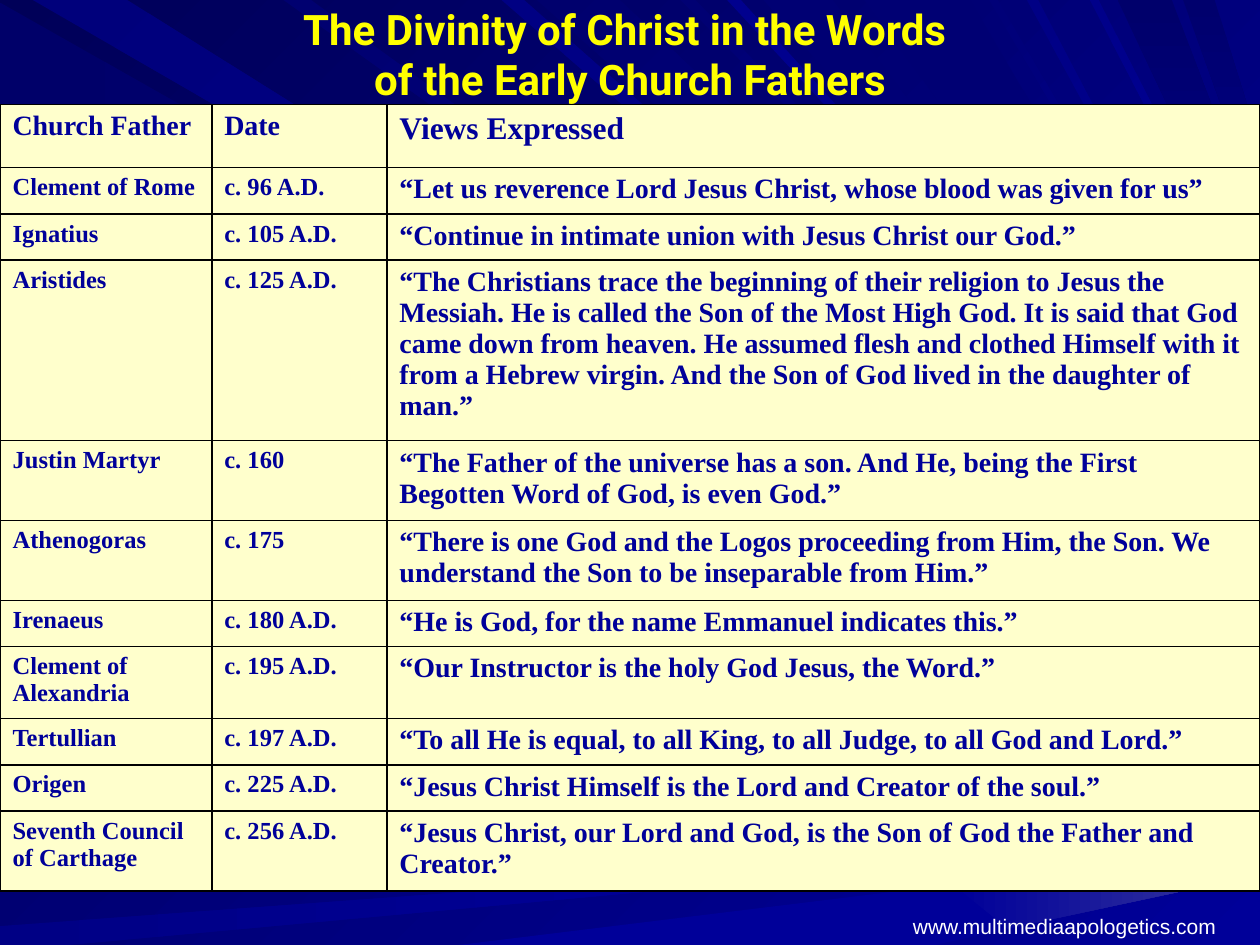
from dataclasses import dataclass
from typing import NamedTuple

from lxml import etree
from pptx import Presentation
from pptx import util as u
from pptx.dml.color import RGBColor
from pptx.enum import text
from pptx.oxml import ns


@dataclass(frozen=True)
class Theme:
    background: tuple = ("000058", "000099")
    title_color: str = "FFFF00"
    ink: str = "000099"
    cell: str = "FFFFCC"
    border: str = "000000"
    footer_color: str = "FFFFFF"
    title_font: str = "Roboto"
    table_font: str = "Times New Roman"
    footer_font: str = "Arial"
    title_size: int = 24
    header_sizes: tuple = (16, 16, 18)
    body_sizes: tuple = (14, 14, 16)
    footer_size: int = 12


class Beam(NamedTuple):
    """A ray of light; points are in tenths of the slide width."""
    start: str
    end: str
    angle: int
    points: tuple


class Witness(NamedTuple):
    father: str
    date: str
    view: str
    height: float


THEME = Theme()
UNIT = u.Cm(2.54)
ONE_LINE, TWO_NAME_LINES, TWO_VIEW_LINES = 0.93, 1.45, 1.61
COLUMN_WIDTHS = (4.27, 3.53, 17.6)

BEAMS = (
    Beam("000069", "000080", 0, ((5.56, 3.17), (0, 0.02), (0, 0.93), (5.29, 3.45), (10, 5.7), (10, 5.69))),
    Beam("00007B", "000099", 45, ((5.77, 2.98), (1.01, 0), (0.26, 0), (5.63, 3.1), (10, 5.63), (10, 5.62))),
    Beam("000085", "000099", 0, ((0, 7.5), (0.54, 7.5), (6.28, 6.97), (6.28, 6.89), (0, 7.35))),
    Beam("000099", "000099", 0, ((7.42, 7.5), (8.01, 7.37), (7.56, 7.02), (3.64, 7.5))),
    Beam("000099", "39399E", 0, ((10, 6.94), (10, 6.72), (7.56, 7.02), (8, 7.37))),
    Beam("000083", "000099", 45, ((3.98, 0), (9.44, 4.73), (9.47, 4.69), (4.16, 0))),
    Beam("00006D", "000099", 45, ((4.26, 0), (9.51, 4.65), (9.68, 4.49), (4.92, 0))),
    Beam("000073", "000099", 45, ((5.4, 0), (9.77, 4.4), (5.52, 0))),
    Beam("000073", "000080", 90, ((6.06, 0), (9.85, 4.31), (9.87, 4.3), (6.61, 0))),
    Beam("00006B", "000080", 90, ((8.87, 0), (9.73, 1.81), (9.86, 1.48), (9.3, 0))),
    Beam("00006D", "000080", 90, ((9.64, 0), (9.39, 0), (9.89, 1.38), (9.99, 1.13))),
    Beam("000070", "000099", 45, ((2.25, 0), (9.99, 5.52), (9.99, 5.47), (2.47, 0))),
    Beam("00008E", "000099", 45, ((5.77, 0), (9.99, 4.54), (9.99, 4.53), (5.88, 0))),
    Beam("000073", "000080", 90, ((7.7, 0), (6.86, 0), (9.99, 4.28), (9.99, 3.9))),
    Beam("000078", "000099", 45, ((7.85, 0), (9.99, 3.6), (9.99, 3.54), (7.92, 0))),
    Beam("000085", "000099", 45, ((8.15, 0), (9.99, 3.36), (9.99, 3.35), (8.24, 0))),
    Beam("00008A", "000099", 45, ((9.99, 2.49), (8.72, 0), (8.65, 0), (9.99, 2.58))),
)

HEADER = Witness("Church Father", "Date", "Views Expressed", 1.27)
WITNESSES = (
    Witness("Clement of Rome", "c. 96 A.D.",
            "“Let us reverence Lord Jesus Christ, whose blood was given for us”", ONE_LINE),
    Witness("Ignatius", "c. 105 A.D.",
            "“Continue in intimate union with Jesus Christ our God.”", ONE_LINE),
    Witness("Aristides", "c. 125 A.D.",
            "“The Christians trace the beginning of their religion to Jesus the Messiah. "
            "He is called the Son of the Most High God. It is said that God came down from heaven. "
            "He assumed flesh and clothed Himself with it from a Hebrew virgin. "
            "And the Son of God lived in the daughter of man.”", 3.63),
    Witness("Justin Martyr", "c. 160",
            "“The Father of the universe has a son. And He, being the First Begotten "
            "Word of God, is even God.”", TWO_VIEW_LINES),
    Witness("Athenogoras", "c. 175",
            "“There is one God and the Logos proceeding from Him, the Son. "
            "We understand the Son to be inseparable from Him.”", TWO_VIEW_LINES),
    Witness("Irenaeus", "c. 180 A.D.",
            "“He is God, for the name Emmanuel indicates this.”", ONE_LINE),
    Witness("Clement of Alexandria", "c. 195 A.D.",
            "“Our Instructor is the holy God Jesus, the Word.”", TWO_NAME_LINES),
    Witness("Tertullian", "c. 197 A.D.",
            "“To all He is equal, to all King, to all Judge, to all God and Lord.”", ONE_LINE),
    Witness("Origen", "c. 225 A.D.",
            "“Jesus Christ Himself is the Lord and Creator of the soul.”", ONE_LINE),
    Witness("Seventh Council of Carthage", "c. 256 A.D.",
            "“Jesus Christ, our Lord and God, is the Son of God the Father and Creator.”",
            TWO_VIEW_LINES),
)


def fill_gradient(fill, start: str, end: str, angle: int) -> None:
    """Fill from start to end, with the angle measured clockwise."""
    fill.gradient()
    fill.gradient_angle = -angle % 360
    for stop, color in zip(fill.gradient_stops, (start, end)):
        stop.color.rgb = RGBColor.from_string(color)


def add_run(paragraph, words: str, font: str, size: int, color: str, bold: bool = False) -> None:
    run = paragraph.add_run()
    run.text = words
    run.font.name, run.font.size, run.font.bold = font, u.Pt(size), bold
    run.font.color.rgb = RGBColor.from_string(color)


def draw_beam(slide, beam: Beam) -> None:
    points = [(x * UNIT, y * UNIT) for x, y in beam.points]
    builder = slide.shapes.build_freeform(*points[0])
    builder.add_line_segments(points[1:], close=True)
    shape = builder.convert_to_shape()
    shape.shadow.inherit = False
    shape.line.fill.background()
    fill_gradient(shape.fill, beam.start, beam.end, beam.angle)


def set_borders(cell) -> None:
    properties = cell._tc.get_or_add_tcPr()
    for side in ("a:lnL", "a:lnR", "a:lnT", "a:lnB"):
        line = etree.SubElement(properties, ns.qn(side), w=str(u.Pt(1)))
        solid = etree.SubElement(line, ns.qn("a:solidFill"))
        etree.SubElement(solid, ns.qn("a:srgbClr"), val=THEME.border)


def draw_table(slide, rows: tuple) -> None:
    frame = slide.shapes.add_table(len(rows), len(COLUMN_WIDTHS), 0, u.Cm(2.11), u.Cm(25.4),
                                   u.Cm(sum(row.height for row in rows)))
    table = frame.table
    table.horz_banding = False
    for column, width in zip(table.columns, COLUMN_WIDTHS):
        column.width = u.Cm(width)
    for index, witness in enumerate(rows):
        table.rows[index].height = u.Cm(witness.height)
        sizes = THEME.body_sizes if index else THEME.header_sizes
        for cell, words, size in zip(table.rows[index].cells, witness[:3], sizes):
            set_borders(cell)
            cell.fill.solid()
            cell.fill.fore_color.rgb = RGBColor.from_string(THEME.cell)
            add_run(cell.text_frame.paragraphs[0], words, THEME.table_font, size, THEME.ink, True)


def draw_footer(slide) -> None:
    frame = slide.shapes.add_textbox(u.Cm(17.15), u.Cm(17.78), u.Cm(7.62), u.Cm(1.27)).text_frame
    frame.word_wrap = True
    frame.vertical_anchor = text.MSO_ANCHOR.BOTTOM
    paragraph = frame.paragraphs[0]
    paragraph.alignment = text.PP_ALIGN.RIGHT
    add_run(paragraph, "www.multimediaapologetics.com", THEME.footer_font,
            THEME.footer_size, THEME.footer_color)


def format_title(slide) -> None:
    title = slide.shapes.title
    title.left, title.top, title.width, title.height = map(u.Cm, (1.27, 0.76, 22.86, 1.55))
    frame = title.text_frame
    frame.auto_size = text.MSO_AUTO_SIZE.NONE
    frame.vertical_anchor = text.MSO_ANCHOR.MIDDLE
    # The bottom margin lifts the two lines clear of the table
    frame.margin_top, frame.margin_bottom = 0, u.Cm(0.91)
    paragraph = frame.paragraphs[0]
    paragraph.alignment = text.PP_ALIGN.CENTER
    style = (THEME.title_font, THEME.title_size, THEME.title_color, True)
    add_run(paragraph, "The Divinity of Christ in the Words ", *style)
    paragraph.add_line_break()
    add_run(paragraph, "of the Early Church Fathers", *style)
    # Bring the title in front of the beams
    title.element.getparent().append(title.element)


def main() -> None:
    presentation = Presentation()
    presentation.slide_width, presentation.slide_height = u.Cm(25.4), u.Cm(19.05)
    slide = presentation.slides.add_slide(presentation.slide_layouts[5])

    # Backdrop
    fill_gradient(slide.background.fill, *THEME.background, 45)
    for beam in BEAMS:
        draw_beam(slide, beam)

    # Content
    draw_footer(slide)
    draw_table(slide, (HEADER, *WITNESSES))
    format_title(slide)
    presentation.save("out.pptx")


if __name__ == "__main__":
    main()
